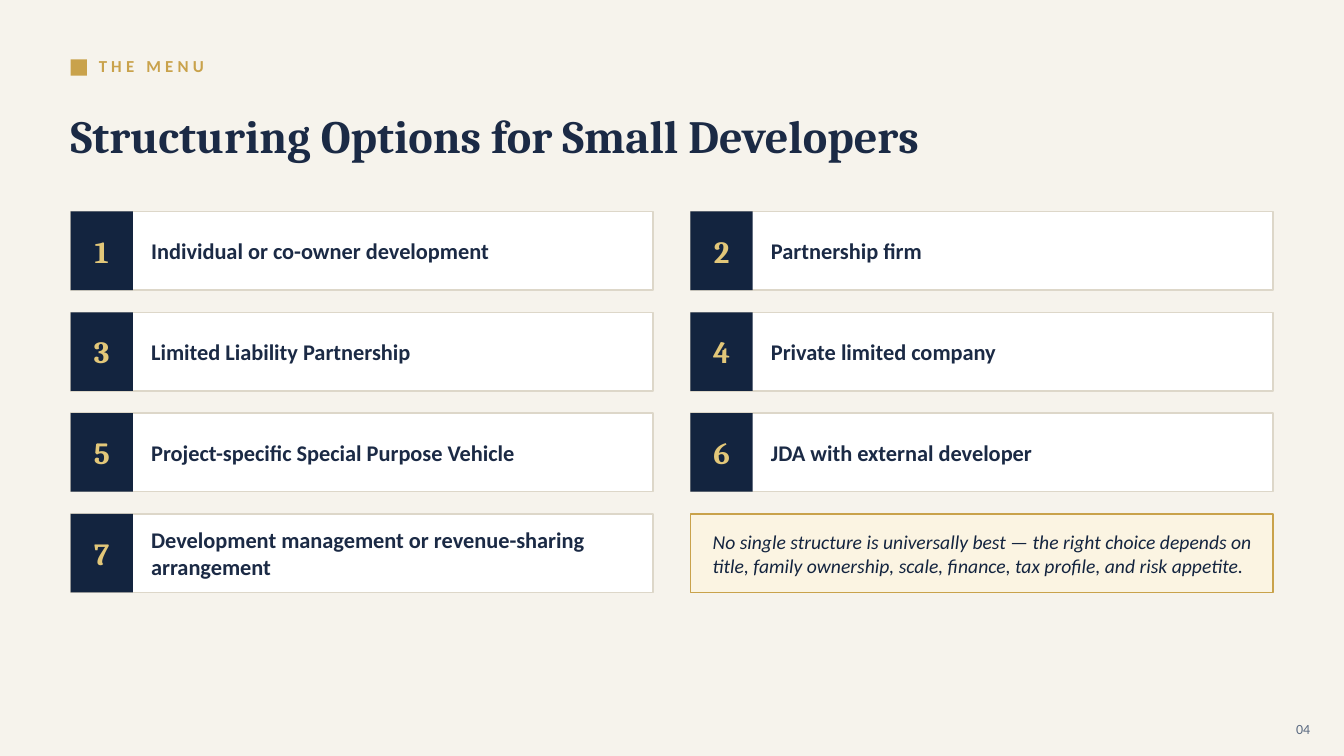
import pptx
import pptx.util
import pptx.dml.color
import pptx.enum.shapes
import pptx.enum.text

Cm = pptx.util.Cm
Align = pptx.enum.text.PP_ALIGN

COLOURS = {
    "paper": "F6F3EC", "gold": "C9A24B", "pale gold": "E2C779",
    "cream": "FBF4E2", "navy": "13243F", "ink": "1B2A45",
    "white": "FFFFFF", "border": "DDD7C9", "grey": "5C6B82",
}


def colour(name):
    return pptx.dml.color.RGBColor.from_string(COLOURS[name])


def write(box, text, size, ink, font="Calibri", bold=False, italic=False,
          align=Align.LEFT, spacing=None, tracking=None, left=0, right=0):
    frame = box.text_frame
    frame.word_wrap = True
    frame.auto_size = pptx.enum.text.MSO_AUTO_SIZE.NONE
    frame.vertical_anchor = pptx.enum.text.MSO_ANCHOR.MIDDLE
    frame.margin_left, frame.margin_right = Cm(left), Cm(right)
    frame.margin_top = frame.margin_bottom = 0
    para = frame.paragraphs[0]
    para.alignment = align
    if spacing:
        para.line_spacing = spacing
    span = para.add_run()
    span.text = text
    span.font.name = font
    span.font.size = pptx.util.Pt(size)
    span.font.bold = bold
    span.font.italic = italic
    span.font.color.rgb = colour(ink)
    if tracking:
        span.font._element.set("spc", str(tracking * 100))


def add_panel(left, top, width, height, fill, line=None):
    panel = page.shapes.add_shape(pptx.enum.shapes.MSO_SHAPE.RECTANGLE,
                                  Cm(left), Cm(top), Cm(width), Cm(height))
    panel.shadow.inherit = False
    panel.fill.solid()
    panel.fill.fore_color.rgb = colour(fill)
    if line:
        panel.line.color.rgb = colour(line)
        panel.line.width = pptx.util.Pt(1)
    else:
        panel.line.fill.background()
    return panel


deck = pptx.Presentation()
deck.slide_width, deck.slide_height = Cm(33.87), Cm(19.05)
page = deck.slides.add_slide(deck.slide_layouts[5])
page.background.fill.solid()
page.background.fill.fore_color.rgb = colour("paper")

# Section label
margin = 1.78
add_panel(margin, 1.5, 0.41, 0.41, "gold")
section = page.shapes.add_textbox(Cm(2.49), Cm(1.22), Cm(22.86), Cm(0.86))
write(section, "THE MENU", size=12, ink="gold", bold=True, tracking=3)

# Title
title = page.shapes.title
title.left, title.top = Cm(margin), Cm(2.24)
title.width, title.height = Cm(30.35), Cm(2.34)
write(title, "Structuring Options for Small Developers",
      size=33, ink="ink", font="Cambria", bold=True)

# Numbered options in two columns, closed by a note in the last cell
options = [
    "Individual or co-owner development",
    "Partnership firm",
    "Limited Liability Partnership",
    "Private limited company",
    "Project-specific Special Purpose Vehicle",
    "JDA with external developer",
    "Development management or revenue-sharing arrangement",
]
note = ("No single structure is universally best — the right choice depends on "
        "title, family ownership, scale, finance, tax profile, and risk appetite.")
card_width, card_height, badge_width = 14.68, 1.98, 1.57
cells = [(margin + column * 15.62, 5.33 + row * 2.54)
         for row in range(4) for column in range(2)]

for number, (option, (left, top)) in enumerate(zip(options, cells), start=1):
    add_panel(left, top, card_width, card_height, "white", line="border")
    badge = add_panel(left, top, badge_width, card_height, "navy")
    write(badge, str(number), size=22, ink="pale gold", font="Cambria",
          bold=True, align=Align.CENTER)
    label = page.shapes.add_textbox(Cm(left + 2.03), Cm(top),
                                    Cm(12.27), Cm(card_height))
    write(label, option, size=16, ink="ink", bold=True)

note_panel = add_panel(*cells[-1], card_width, card_height, "cream", line="gold")
write(note_panel, note, size=14, ink="navy", italic=True, spacing=1.05,
      left=0.56, right=0.46)

# Page number
page_number = page.shapes.add_textbox(Cm(31.5), Cm(17.98), Cm(1.52), Cm(0.76))
write(page_number, "04", size=10, ink="grey", align=Align.RIGHT)

deck.save("out.pptx")
